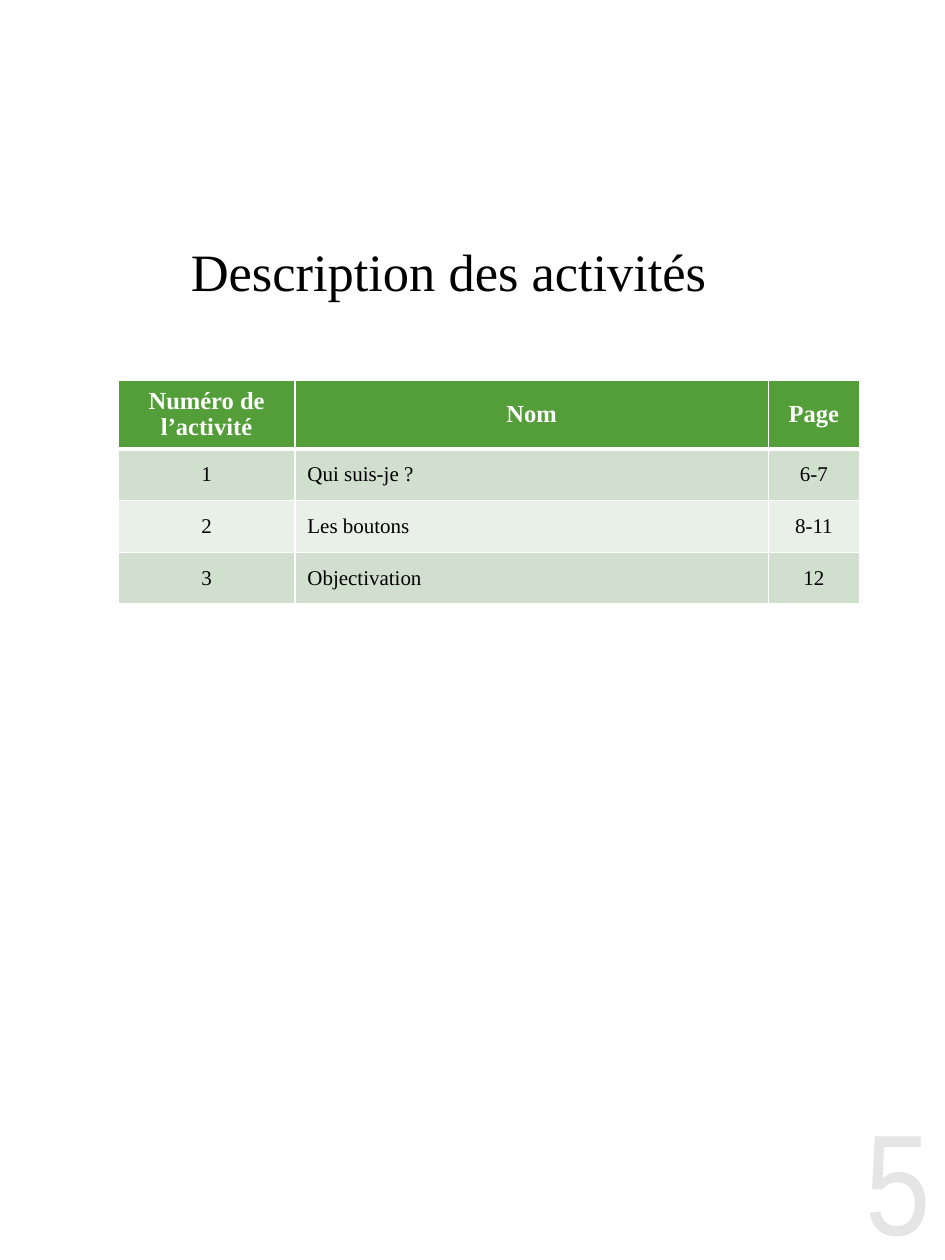
from lxml.etree import SubElement
from pptx import Presentation
from pptx.dml.color import RGBColor
from pptx.enum.text import MSO_ANCHOR as Anchor, PP_ALIGN as Align
from pptx.oxml.ns import qn
from pptx.util import Inches, Pt

# Content
TITLE = "Description des activités "
PAGE_NUMBER = "5"
ROWS = [
    ("Numéro de\nl’activité", "Nom", "Page"),
    ("1", "Qui suis-je ?", "6-7"),
    ("2", "Les boutons", "8-11"),
    ("3", "Objectivation", "12"),
]
COLUMN_WIDTHS = [1.4, 3.76, 0.72]
HEADER_HEIGHT, ROW_HEIGHT = 0.53, 0.41
NAME_COLUMN = 1
SERIF = "Times New Roman"
WHITE, BLACK, GREEN, GREY = "FFFFFF", "000000", "549E39", "E5E5E5"
BANDS = ["D1DFCE", "E9F0E8"]


def color(value):
    return RGBColor.from_string(value)


def write(frame, text, size, fill, font=SERIF, bold=False, align=Align.CENTER, spacing=None):
    frame.text = text
    for paragraph in frame.paragraphs:
        paragraph.alignment = align
        paragraph.line_spacing = spacing
        paragraph.font.name = font
        paragraph.font.size = Pt(size)
        paragraph.font.bold = bold
        paragraph.font.color.rgb = color(fill)


def add_text(slide, box, text, size, fill, font=SERIF):
    frame = slide.shapes.add_textbox(*map(Inches, box)).text_frame
    frame.word_wrap = True
    frame.vertical_anchor = Anchor.MIDDLE
    frame.margin_left = frame.margin_right = 0
    write(frame, text, size, fill, font)


def set_borders(cell, bottom):
    properties = cell._tc.get_or_add_tcPr()
    widths = {"a:lnL": 1, "a:lnR": 1, "a:lnT": 1, "a:lnB": bottom}
    for position, (tag, width) in enumerate(widths.items()):
        line = SubElement(properties, qn(tag), w=str(Pt(width)))
        SubElement(SubElement(line, qn("a:solidFill")), qn("a:srgbClr"), val=WHITE)
        properties.insert(position, line)


presentation = Presentation()
presentation.slide_width, presentation.slide_height = Inches(7.5), Inches(10)
slide = presentation.slides.add_slide(presentation.slide_layouts[6])

# Title and page number
add_text(slide, (0, 1.67, 7.23, 0.95), TITLE, 30, BLACK)
add_text(slide, (6.76, 8.7, 0.74, 1.3), PAGE_NUMBER, 82, GREY, "Arial Narrow")

# Activity table
heights = [HEADER_HEIGHT] + [ROW_HEIGHT] * (len(ROWS) - 1)
table = slide.shapes.add_table(
    len(ROWS), len(COLUMN_WIDTHS), Inches(0.94), Inches(3.02),
    Inches(sum(COLUMN_WIDTHS)), Inches(sum(heights)),
).table
for column, width in zip(table.columns, COLUMN_WIDTHS):
    column.width = Inches(width)
for row_index, (row, height, texts) in enumerate(zip(table.rows, heights, ROWS)):
    row.height = Inches(height)
    header = row_index == 0
    for column_index, (cell, text) in enumerate(zip(row.cells, texts)):
        cell.vertical_anchor = Anchor.MIDDLE
        cell.fill.solid()
        cell.fill.fore_color.rgb = color(GREEN if header else BANDS[(row_index - 1) % 2])
        set_borders(cell, bottom=3 if header else 1)
        left = column_index == NAME_COLUMN and not header
        write(cell.text_frame, text, 14 if header else 12, WHITE if header else BLACK,
              bold=header, align=Align.LEFT if left else Align.CENTER,
              spacing=0.95 if header else None)

presentation.save("out.pptx")
